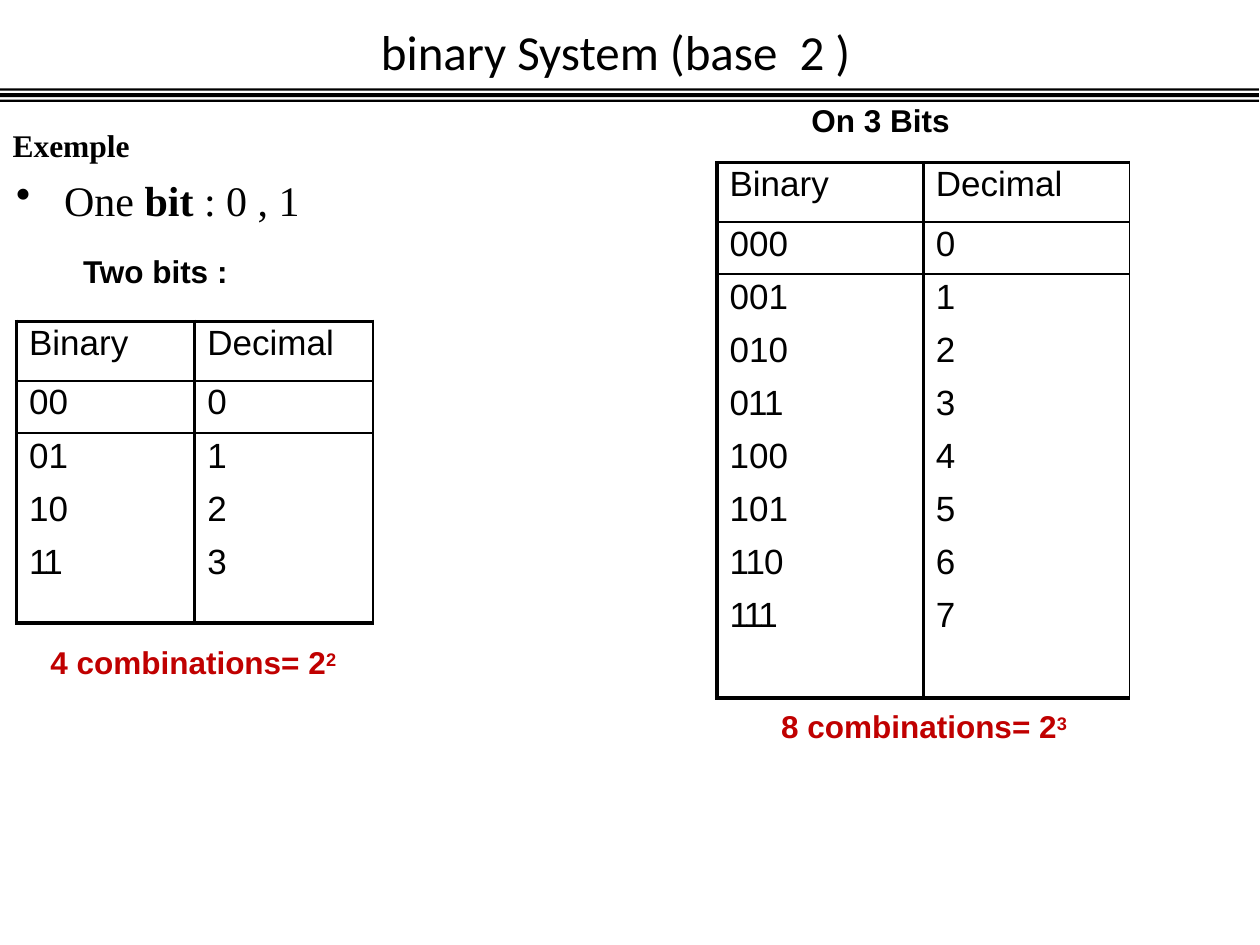
from lxml import etree
from pptx import Presentation
from pptx.dml.color import RGBColor
from pptx.enum import text
from pptx.oxml.ns import qn
from pptx.util import Pt

BLACK, RED = "000000", "C00000"


def rgb(code):
    return RGBColor.from_string(code)


class Page:
    """Holds the style and the slide being filled."""

    sans, serif, head = "Arial", "Times New Roman", "Calibri"
    thick, thin = 2.25, 1

    def __init__(self, slide):
        self.slide = slide

    def para(self, par, runs, size, font, color=BLACK, before=1, left=0,
             hang=0, mark=None, bold=None):
        """Fill a paragraph; runs are (text, attributes) pairs or one string."""
        props = par._p.get_or_add_pPr()
        props.set("marL", str(Pt(left)))
        props.set("indent", str(Pt(-hang)))
        if mark:
            etree.SubElement(props, qn("a:buChar")).set("char", mark)
        par.space_before = Pt(before)
        style = par.font
        style.size, style.name, style.bold = Pt(size), font, bold
        style.color.rgb = rgb(color)
        for words, attrs in [(runs, {})] if isinstance(runs, str) else runs:
            run = par.add_run()
            run.text = words
            for key, value in attrs.items():
                run._r.get_or_add_rPr().set(key, value)

    def box(self, x, y, w, h, top=0.72, anchor=text.MSO_ANCHOR.TOP):
        frame = self.slide.shapes.add_textbox(
            Pt(x), Pt(y), Pt(w), Pt(h)).text_frame
        frame.word_wrap = True
        frame.auto_size = text.MSO_AUTO_SIZE.SHAPE_TO_FIT_TEXT
        frame.vertical_anchor = anchor
        frame.margin_left = frame.margin_right = frame.margin_bottom = 0
        frame.margin_top = Pt(top)
        return frame

    def label(self, x, y, w, runs, color=BLACK, left=0.72):
        self.para(self.box(x, y, w, 23.8).paragraphs[0], runs, 18, self.sans,
                  color, left=left, bold=True)

    def bars(self, width, bands):
        """Draw full-width bands, given as (top, bottom), as one outline."""
        pen = None
        for top, low in bands:
            if pen is None:
                pen = self.slide.shapes.build_freeform(
                    Pt(width), Pt(top), scale=1.0)
            else:
                pen.move_to(Pt(width), Pt(top))
            pen.add_line_segments(
                [(0, Pt(top)), (0, Pt(low)), (Pt(width), Pt(low))], close=True)
        shape = pen.convert_to_shape()
        shape.shadow.inherit = False
        shape.fill.solid()
        shape.fill.fore_color.rgb = rgb(BLACK)
        shape.line.fill.background()

    def edges(self, cell, widths):
        """Set left, right, top and bottom borders; 0 means none."""
        props = cell._tc.get_or_add_tcPr()
        for spot, (side, width) in enumerate(zip("LRTB", widths)):
            line = etree.Element(qn("a:ln" + side))
            if width:
                line.set("w", str(Pt(width)))
                fill = etree.SubElement(line, qn("a:solidFill"))
                etree.SubElement(fill, qn("a:srgbClr")).set("val", BLACK)
            else:
                etree.SubElement(line, qn("a:noFill"))
            props.insert(spot, line)

    def table(self, x, y, col, bits, last):
        """List every number of the given bit count beside its value."""
        rows = [("Binary", "Decimal")]
        rows += [(f"{n:0{bits}b}", str(n)) for n in range(2 ** bits)]
        highs = [34, 29.8] + [30.3] * (len(rows) - 3) + [last]
        grid = self.slide.shapes.add_table(
            len(rows), 2, Pt(x), Pt(y), Pt(2 * col), Pt(sum(highs))).table
        grid.first_row = grid.horz_banding = False
        rules = [self.thick, self.thin, self.thin]
        rules += [0] * (len(rows) - 3) + [self.thick]
        for i, row in enumerate(rows):
            grid.rows[i].height = Pt(highs[i])
            for j, words in enumerate(row):
                grid.columns[j].width = Pt(col)
                cell = grid.cell(i, j)
                cell.margin_left = cell.margin_right = cell.margin_bottom = 0
                cell.margin_top = Pt(1.4 if i < 2 else 2.1)
                cell.fill.background()
                right = self.thin if j else self.thick
                self.edges(cell, (self.thick, right, rules[i], rules[i + 1]))
                tight = {}
                if "11" in words:
                    tight = {"spc": "-50" if "0" in words else "-140"}
                self.para(cell.text_frame.paragraphs[0], [(words, tight)], 20,
                          self.sans, before=1.4 if i < 2 else 2.1, left=7.2)


def main():
    deck = Presentation()
    deck.slide_width, deck.slide_height = Pt(720), Pt(540)
    page = Page(deck.slides.add_slide(deck.slide_layouts[6]))

    title = page.box(106.6, 11.5, 489.6, 34.6, anchor=text.MSO_ANCHOR.MIDDLE)
    title.paragraphs[0].alignment = text.PP_ALIGN.CENTER
    page.para(title.paragraphs[0], "binary System (base  2 )", 28, page.head,
              before=0.9, left=0.72)
    page.bars(719.3, [(56.9, 58.2), (53.3, 55.6), (50.6, 51.9)])

    intro = page.box(6.5, 66.2, 335.5, 100, top=5.8)
    page.para(intro.paragraphs[0], "Exemple", 18, page.serif, before=5.7,
              left=0.72, bold=True)
    page.para(intro.add_paragraph(),
              [("One ", {}), ("bit ", {"b": "1"}), (": 0 , 1", {})],
              24, page.serif, before=6.3, left=30.2, hang=27.4, mark="•")
    page.para(intro.add_paragraph(), "Two bits :", 18, page.sans, before=15.3,
              left=41, bold=True)

    page.table(9.4, 183.6, 101.9, 2, 48.2)
    page.label(463, 56.9, 86.4, "On 3 Bits")
    page.table(409.7, 92.9, 117.9, 3, 60.5)

    for x, y, bits in [(25.9, 366.5, 2), (443.5, 403.2, 3)]:
        page.label(x, y, 174.2, [(f"{2 ** bits} combinations= 2", {}),
                                 (str(bits), {"baseline": "25000"})],
                   RED, left=2.9)

    deck.save("out.pptx")


if __name__ == "__main__":
    main()
